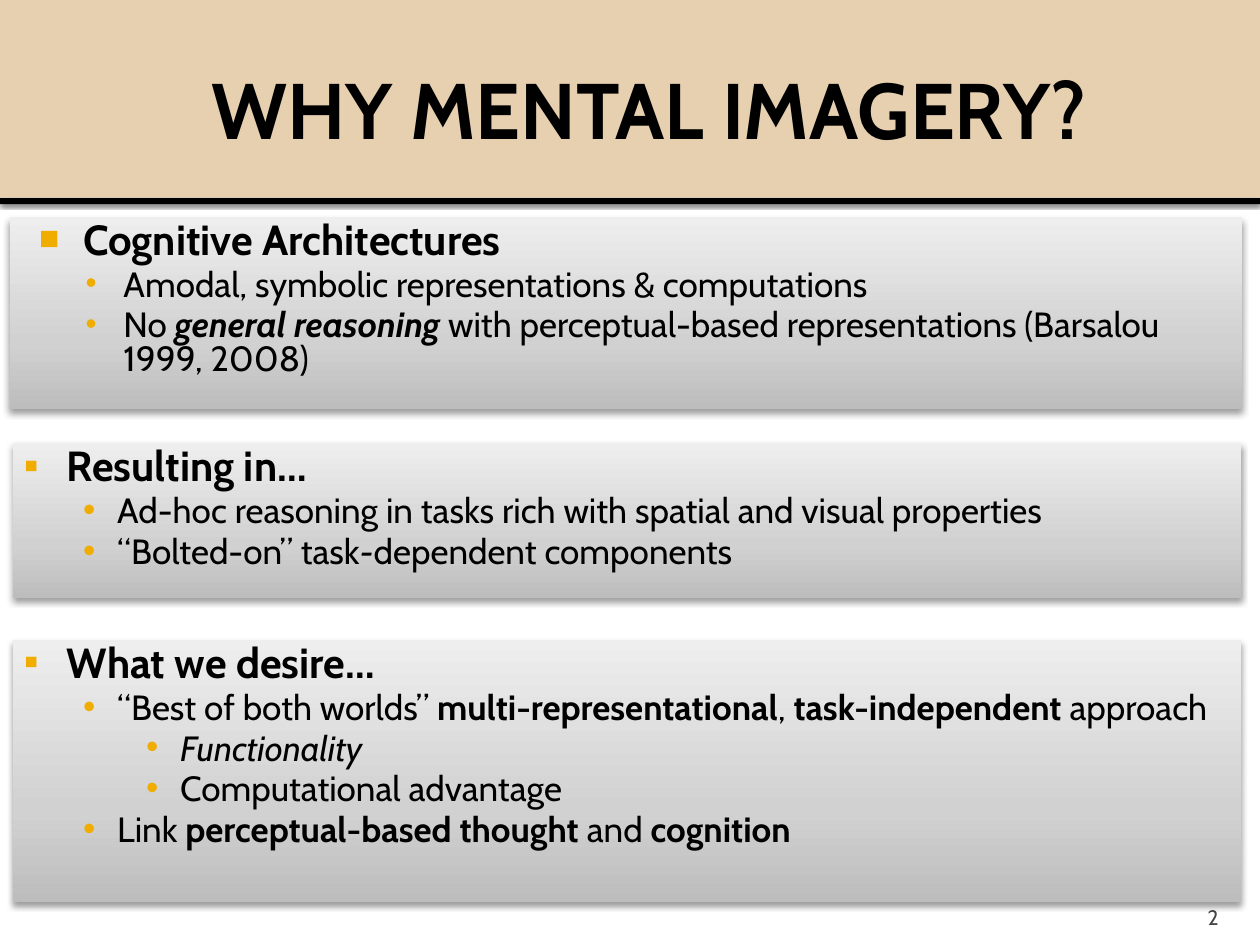
from copy import deepcopy
from dataclasses import dataclass
from typing import NamedTuple

from lxml.etree import SubElement
from pptx import Presentation
from pptx.dml.color import RGBColor as Rgb
from pptx.enum.shapes import MSO_SHAPE as Kind
from pptx.enum.text import MSO_ANCHOR as Anchor, MSO_AUTO_SIZE as Fit, PP_ALIGN as Align
from pptx.oxml.ns import qn
from pptx.util import Inches, Pt


@dataclass(frozen=True)
class Theme:
    font: str = "Cabin"
    ink: str = "000000"
    sand: str = "E7D0B0"
    gold: str = "F0AD00"
    gray: str = "454545"
    grad: tuple = ((0, "BDBDBD"), (0.35, "D1D1D1"), (1, "EEEEEE"))
    title: int = 45
    head: int = 24
    text: int = 20
    note: int = 12


class Shade(NamedTuple):
    alpha: int
    blur: float
    dist: float


class Mark(NamedTuple):
    left: float
    hang: float
    char: str
    size: int = 100


class Line(NamedTuple):
    level: int
    runs: tuple


class Panel(NamedTuple):
    box: tuple
    inset: float
    marks: tuple
    lines: tuple


THEME = Theme()
BOLD = {"bold": True}
SLANT = {"italic": True}
SOFT = Shade(38, 3.5, 2)
FIRST = (Mark(0.48, 0.35, "■", 80), Mark(0.8, 0.3, "•", 90))
OTHER = (Mark(0.34, 0.34, "▪"), Mark(0.74, 0.27, "•"), Mark(1.24, 0.27, "•"))


def head(text: str) -> Line:
    return Line(0, ((text, BOLD),))


def item(*runs, level: int = 1) -> Line:
    """Plain strings are regular text; pairs carry their own format."""
    return Line(level, tuple((r, {}) if isinstance(r, str) else r for r in runs))


PANELS = (
    Panel((0.08, 1.72, 9.78, 1.53), 0.1, FIRST, (
        head("Cognitive Architectures"),
        item("Amodal, symbolic representations & computations"),
        item("No ", ("general reasoning ", BOLD | SLANT),
             "with perceptual-based representations (Barsalou 1999, 2008)"))),
    Panel((0.1, 3.52, 9.75, 1.23), 0.09, OTHER, (
        head("Resulting in…"),
        item("Ad-hoc reasoning in tasks rich with spatial and visual properties"),
        item("“Bolted-on” task", ("-", SLANT), "dependent components"))),
    Panel((0.1, 5.08, 9.75, 2.08), 0.09, OTHER, (
        head("What we desire…"),
        item("“Best of both worlds” ", ("multi-representational", BOLD), ", ",
             ("task-independent ", BOLD), "approach"),
        item(("Functionality", SLANT), level=2),
        item("Computational advantage", level=2),
        item("Link ", ("perceptual-based thought ", BOLD), "and ", ("cognition", BOLD)))),
)


def place(shape, box: tuple) -> None:
    for name, value in zip(("left", "top", "width", "height"), box):
        setattr(shape, name, Inches(value))


def set_frame(shape, insets: tuple, anchor) -> None:
    frame = shape.text_frame
    form = {"word_wrap": True, "auto_size": Fit.NONE, "vertical_anchor": anchor}
    sides = ("margin_left", "margin_top", "margin_right", "margin_bottom")
    form |= dict(zip(sides, map(Inches, insets)))
    for name, value in form.items():
        setattr(frame, name, value)


def add_run(para, text: str, size: int, color: str, form: dict) -> None:
    run = para.add_run()
    run.text = text
    base = {"name": THEME.font, "size": Pt(size), "bold": False, "italic": False}
    for name, value in (base | form).items():
        setattr(run.font, name, value)
    run.font.color.rgb = Rgb.from_string(color)


def set_shade(shape, shade: Shade) -> None:
    shape.shadow.inherit = False
    effects = shape._element.spPr.find(qn("a:effectLst"))
    outer = SubElement(effects, qn("a:outerShdw"), blurRad=str(Pt(shade.blur)),
                       dist=str(Pt(shade.dist)), dir="5400000", rotWithShape="0")
    color = SubElement(outer, qn("a:srgbClr"), val="000000")
    SubElement(color, qn("a:alpha"), val=str(shade.alpha * 1000))


def set_grad(shape) -> None:
    fill = shape.fill
    fill.gradient()
    fill.gradient_angle = 90
    stops = shape._element.spPr.find(f".//{qn('a:gsLst')}")
    stops.append(deepcopy(stops[0]))
    for stop, (place_at, color) in zip(fill.gradient_stops, THEME.grad):
        stop.position = place_at
        stop.color.rgb = Rgb.from_string(color)


def set_mark(para, mark: Mark) -> None:
    props = para._p.get_or_add_pPr()
    props.set("marL", str(Inches(mark.left)))
    props.set("indent", str(-Inches(mark.hang)))
    color = SubElement(props, qn("a:buClr"))
    SubElement(color, qn("a:srgbClr"), val=THEME.gold)
    SubElement(props, qn("a:buSzPct"), val=str(mark.size * 1000))
    SubElement(props, qn("a:buFont"), typeface="Arial")
    SubElement(props, qn("a:buChar"), char=mark.char)


def add_band(slide, box: tuple, color: str):
    band = slide.shapes.add_shape(Kind.RECTANGLE, *map(Inches, box))
    band.shadow.inherit = False
    band.fill.solid()
    band.fill.fore_color.rgb = Rgb.from_string(color)
    band.line.fill.background()
    return band


def fill_panel(shape, panel: Panel) -> None:
    place(shape, panel.box)
    set_grad(shape)
    shape.line.fill.background()
    set_shade(shape, SOFT)
    set_frame(shape, (panel.inset, 0.05, panel.inset, 0.05), Anchor.TOP)
    frame = shape.text_frame
    for i, line in enumerate(panel.lines):
        para = frame.add_paragraph() if i else frame.paragraphs[0]
        set_mark(para, panel.marks[line.level])
        form = {"level": line.level, "alignment": Align.LEFT, "line_spacing": 0.8,
                "space_before": Pt(4 if i else 0)}
        for name, value in form.items():
            setattr(para, name, value)
        size = THEME.text if line.level else THEME.head
        for text, style in line.runs:
            add_run(para, text, size, THEME.ink, style)


def main() -> None:
    deck = Presentation()
    deck.slide_width, deck.slide_height = Inches(10), Inches(7.5)
    slide = deck.slides.add_slide(deck.slide_layouts[1])
    title, body = slide.shapes.title, slide.placeholders[1]

    # Header bands, kept behind the placeholders
    rule = add_band(slide, (0, 1.57, 10, 0.05), THEME.ink)
    set_shade(rule, Shade(60, 2.5, 0.8))
    add_band(slide, (0, 0, 10, 1.57), THEME.sand)
    for shape in (title, body):
        slide.shapes._spTree.append(shape._element)

    # Title
    place(title, (1.25, 0.17, 7.75, 1.37))
    set_frame(title, (0.1, 0.05, 0.05, 0.05), Anchor.MIDDLE)
    para = title.text_frame.paragraphs[0]
    para.alignment = Align.CENTER
    add_run(para, "WHY MENTAL IMAGERY?", THEME.title, THEME.ink, BOLD)

    # Slide number
    note = slide.shapes.add_textbox(*map(Inches, (8.97, 7.08, 0.8, 0.3)))
    set_frame(note, (0.1, 0.05, 0.1, 0), Anchor.BOTTOM)
    para = note.text_frame.paragraphs[0]
    para.alignment = Align.RIGHT
    add_run(para, "2", THEME.note, THEME.gray, {})

    # Text panels: the body placeholder, then two rectangles
    fill_panel(body, PANELS[0])
    for panel in PANELS[1:]:
        shape = slide.shapes.add_shape(Kind.RECTANGLE, *map(Inches, panel.box))
        fill_panel(shape, panel)

    deck.save("out.pptx")


if __name__ == "__main__":
    main()
